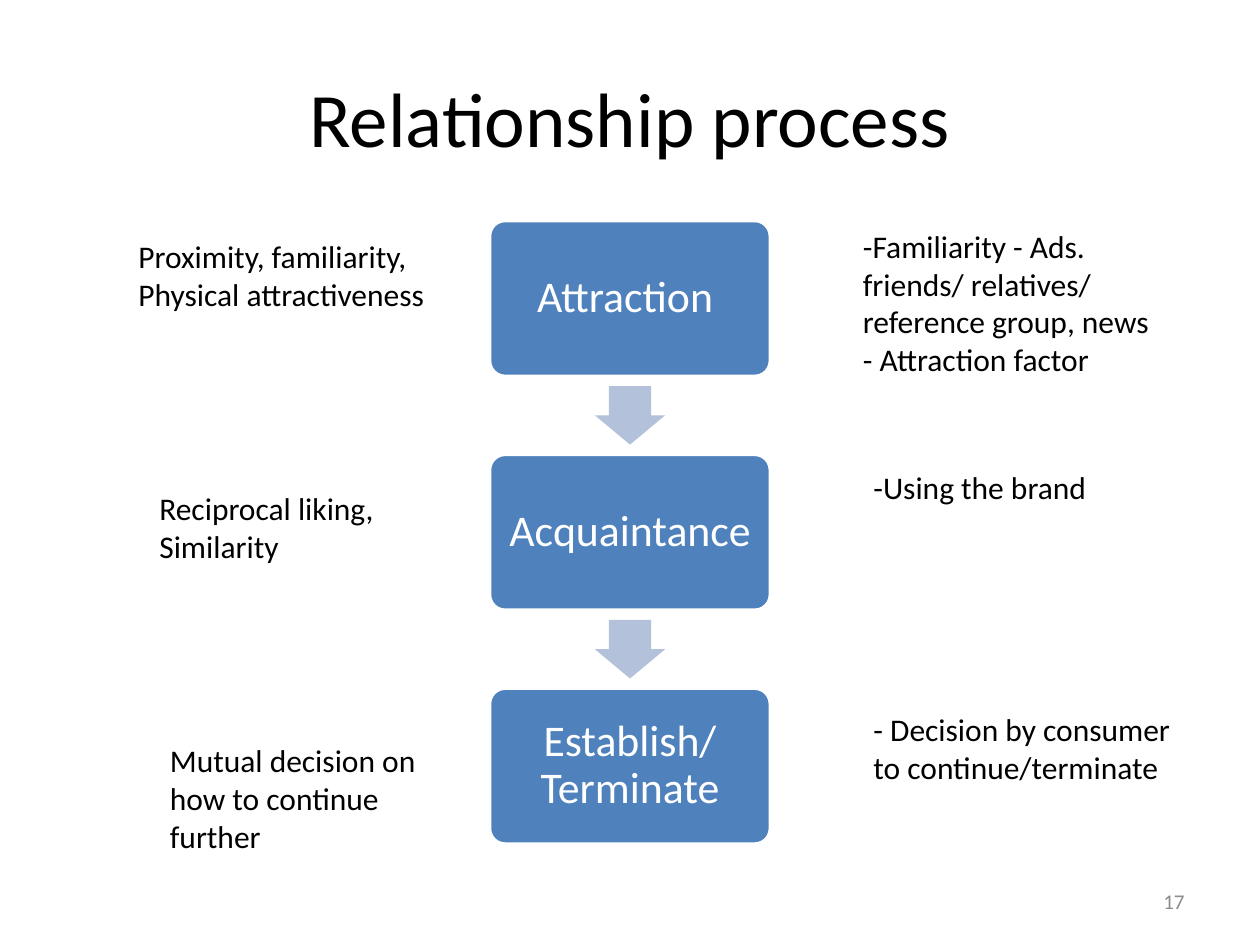
"""Builds the slide on the relationship process: three steps with notes on both sides."""
from dataclasses import dataclass

from pptx import Presentation
from pptx.dml.color import RGBColor
from pptx.enum.shapes import MSO_SHAPE
from pptx.enum.text import MSO_ANCHOR, PP_ALIGN
from pptx.util import Inches, Pt

STEP_SHAPE, ARROW_SHAPE = MSO_SHAPE.ROUNDED_RECTANGLE, MSO_SHAPE.RIGHT_ARROW
TOP, MIDDLE = MSO_ANCHOR.TOP, MSO_ANCHOR.MIDDLE
LEFT, CENTER, RIGHT = PP_ALIGN.LEFT, PP_ALIGN.CENTER, PP_ALIGN.RIGHT

SLIDE_WIDTH, SLIDE_HEIGHT = Inches(10), Inches(7.5)
COLUMNS, ROWS = 120, 90
BLANK_LAYOUT = 6

STEP_CENTER, STEP_TOP, STEP_PITCH = 60, 21, 22.27
STEP_WIDTH, STEP_HEIGHT = 26.75, 14.85
ARROW_LENGTH, ARROW_BREADTH = 5.57, 6.69

STEPS = ["Attraction ", "Acquaintance", "Establish/ Terminate"]
NOTES = [
    ((12, 22, 30, 8.5), ["Proximity, familiarity,", "Physical attractiveness"]),
    ((14, 46, 23.8, 8.5), ["Reciprocal liking,", "Similarity"]),
    ((15, 70, 28, 12.1), ["Mutual decision on how to continue further"]),
    ((81, 21, 32, 15.7), ["-Familiarity - Ads. friends/ relatives/ reference group, news",
                          "- Attraction factor"]),
    ((82, 44, 32, 4.8), ["-Using the brand"]),
    ((82, 67, 32, 8.5), ["- Decision by consumer to continue/terminate"]),
]


@dataclass(frozen=True)
class Theme:
    """Colours, font and type sizes of the slide."""

    font: str = "Calibri"
    ink: str = "000000"
    muted: str = "8C8C8C"
    paper: str = "FFFFFF"
    step: str = "4F81BD"
    arrow: str = "B3C1DB"
    title_size: int = 44
    step_size: int = 25
    note_size: int = 18
    number_size: int = 12


THEME = Theme()


def apply(target, formats):
    """Set each named attribute of the target."""
    for attribute, value in formats.items():
        setattr(target, attribute, value)


def place(left, top, width, height):
    """Turn grid columns and rows into slide lengths."""
    column, row = SLIDE_WIDTH / COLUMNS, SLIDE_HEIGHT / ROWS
    return (round(left * column), round(top * row),
            round(width * column), round(height * row))


def write(holder, lines, size, color, align=LEFT, anchor=TOP, spacing=1.0, inset=None):
    """Fill a text holder with one paragraph per line."""
    frame = holder.text_frame
    apply(frame, {"word_wrap": True, "vertical_anchor": anchor})
    if inset is not None:
        apply(frame, {"margin_" + side: inset for side in ("left", "top", "right", "bottom")})
    frame.text = "\n".join(lines)
    for paragraph in frame.paragraphs:
        apply(paragraph, {"alignment": align, "line_spacing": spacing})
        apply(paragraph.font, {"name": THEME.font, "size": Pt(size)})
        paragraph.font.color.rgb = RGBColor.from_string(color)


def add_text(slide, area, lines, size, color=THEME.ink, **formats):
    """Add a text box over an area of the grid."""
    write(slide.shapes.add_textbox(*place(*area)), lines, size, color, **formats)


def add_filled(slide, kind, area, fill, adjustments):
    """Add a flat preset shape without outline."""
    shape = slide.shapes.add_shape(kind, *place(*area))
    shape.shadow.inherit = False
    shape.fill.solid()
    shape.fill.fore_color.rgb = RGBColor.from_string(fill)
    shape.line.fill.background()
    for index, value in enumerate(adjustments):
        shape.adjustments[index] = value
    return shape


def add_step(slide, top, label):
    """Add one labelled step of the process."""
    area = (STEP_CENTER - STEP_WIDTH / 2, top, STEP_WIDTH, STEP_HEIGHT)
    step = add_filled(slide, STEP_SHAPE, area, THEME.step, [0.1])
    step.line.color.rgb = RGBColor.from_string(THEME.paper)
    step.line.width = Pt(2)
    write(step, [label], THEME.step_size, THEME.paper, align=CENTER,
          anchor=MIDDLE, spacing=0.9, inset=Inches(0.1))


def add_arrow(slide, step_top):
    """Add a downward arrow midway between a step and the next one."""
    middle = step_top + (STEP_HEIGHT + STEP_PITCH) / 2
    area = (STEP_CENTER - ARROW_LENGTH / 2, middle - ARROW_BREADTH / 2,
            ARROW_LENGTH, ARROW_BREADTH)
    add_filled(slide, ARROW_SHAPE, area, THEME.arrow, [0.6, 0.5]).rotation = 90


def main():
    """Build and save the slide."""
    deck = Presentation()
    apply(deck, {"slide_width": SLIDE_WIDTH, "slide_height": SLIDE_HEIGHT})
    slide = deck.slides.add_slide(deck.slide_layouts[BLANK_LAYOUT])

    add_text(slide, (6, 3.6, 108, 15), ["Relationship process"], THEME.title_size,
             align=CENTER, anchor=MIDDLE)
    for index, label in enumerate(STEPS):
        top = STEP_TOP + index * STEP_PITCH
        add_step(slide, top, label)
        if index < len(STEPS) - 1:
            add_arrow(slide, top)
    add_text(slide, (86, 83.4, 28, 4.8), ["17"], THEME.number_size, THEME.muted,
             align=RIGHT, anchor=MIDDLE)
    for area, lines in NOTES:
        add_text(slide, area, lines, THEME.note_size)

    deck.save("out.pptx")


if __name__ == "__main__":
    main()
